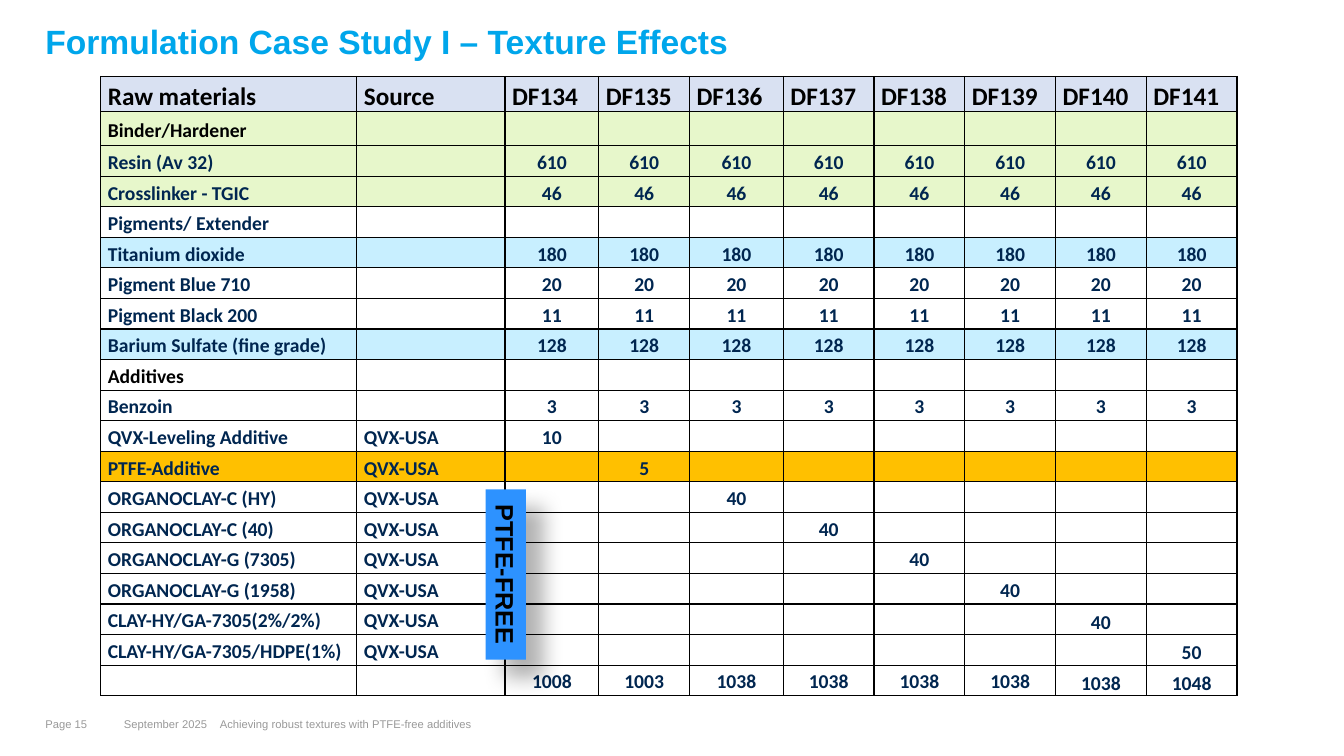
import lxml.etree
import pptx
import pptx.dml.color
import pptx.enum.shapes
import pptx.enum.text
import pptx.oxml.ns
import pptx.util

Inches, Pt = pptx.util.Inches, pptx.util.Pt
qn = pptx.oxml.ns.qn
ALIGN = pptx.enum.text.PP_ALIGN
ANCHOR = pptx.enum.text.MSO_ANCHOR
FIT = pptx.enum.text.MSO_AUTO_SIZE

THEME = {
    "heading_font": "Arial", "table_font": "Calibri",
    "title": "00A6EB", "footer": "999999", "ink": "000000", "navy": "002650",
    "header": "D9E1F2", "binder": "E7F7CB", "filler": "C8EFFF", "ptfe": "FFC000",
    "badge": "2D92FF",
    "title_size": 24, "header_size": 18, "body_size": 14, "footer_size": 8,
}


def write(paragraph, text, font, size, color, bold=False, **layout):
    for name, value in layout.items():
        setattr(paragraph, name, value)
    run = paragraph.add_run()
    run.text = text
    for name, value in {"name": THEME[font], "size": Pt(THEME[size]), "bold": bold}.items():
        setattr(run.font, name, value)
    run.font.color.rgb = pptx.dml.color.RGBColor.from_string(THEME[color])


def set_format(target, **values):
    for name, value in values.items():
        setattr(target, name, value)


deck = pptx.Presentation()
set_format(deck, slide_width=Inches(13.33), slide_height=Inches(7.5))
slide = deck.slides.add_slide(deck.slide_layouts[6])

captions = [
    ("Formulation Case Study I – Texture Effects", (0.45, 0.21, 12.44, 1.1), 0.04,
     {"size": "title_size", "color": "title", "bold": True, "line_spacing": 0.9}),
    ("September 2025", (1.23, 7.12, 0.87, 0.16), 0, {"size": "footer_size", "color": "footer"}),
    ("Achieving robust textures with PTFE-free additives", (2.18, 7.12, 8.98, 0.16), 0,
     {"size": "footer_size", "color": "footer"}),
    ("Page 15", (0.45, 7.12, 0.68, 0.16), 0, {"size": "footer_size", "color": "footer"}),
]
for text, box, top_margin, style in captions:
    frame = slide.shapes.add_textbox(*map(Inches, box)).text_frame
    set_format(frame, word_wrap=True, margin_left=0, margin_right=0,
               margin_top=Inches(top_margin), margin_bottom=0)
    write(frame.paragraphs[0], text, "heading_font", **style)

formulations = [f"DF{number}" for number in range(134, 142)]
count = len(formulations)
supplier = "QVX-USA"
everywhere = [
    ("Binder/Hardener", None, "binder", "ink"),
    ("Resin (Av 32)", 610, "binder", "navy"),
    ("Crosslinker - TGIC", 46, "binder", "navy"),
    ("Pigments/ Extender", None, None, "navy"),
    ("Titanium dioxide", 180, "filler", "navy"),
    ("Pigment Blue 710", 20, None, "navy"),
    ("Pigment Black 200", 11, None, "navy"),
    ("Barium Sulfate (fine grade)", 128, "filler", "navy"),
    ("Additives", None, None, "ink"),
    ("Benzoin", 3, None, "navy"),
]
additives = [
    ("QVX-Leveling Additive", 10),
    ("PTFE-Additive", 5),
    ("ORGANOCLAY-C (HY)", 40),
    ("ORGANOCLAY-C (40)", 40),
    ("ORGANOCLAY-G (7305)", 40),
    ("ORGANOCLAY-G (1958)", 40),
    ("CLAY-HY/GA-7305(2%/2%)", 40),
    ("CLAY-HY/GA-7305/HDPE(1%)", 50),
]
base = sum(amount or 0 for _, amount, _, _ in everywhere)

rows = [(["Raw materials", "Source", *formulations], "header", "ink")]
for material, amount, band, ink in everywhere:
    rows.append(([material, "", *[amount or ""] * count], band, ink))
for column, (material, amount) in enumerate(additives):
    doses = [amount if position == column else "" for position in range(count)]
    band = "ptfe" if material.startswith("PTFE") else None
    rows.append(([material, supplier, *doses], band, "navy"))
rows.append((["", "", *[base + amount for _, amount in additives]], None, "navy"))

widths = [2.54, 1.47, 0.93, 0.9, 0.93, *[0.9] * 5]
tall_row, table_height = 0.34, 6.14
short_row = (table_height - 2 * tall_row) / (len(rows) - 2)
recipe = slide.shapes.add_table(len(rows), len(widths), Inches(1), Inches(0.76),
                                Inches(sum(widths)), Inches(table_height)).table
set_format(recipe, first_row=False, horz_banding=False)
for column, width in zip(recipe.columns, widths):
    column.width = Inches(width)

for r, (values, band, ink) in enumerate(rows):
    recipe.rows[r].height = Inches(tall_row if r < 2 else short_row)
    for c, value in enumerate(values):
        cell = recipe.cell(r, c)
        low = r >= len(rows) - 3 and c >= len(widths) - 2
        set_format(cell, margin_left=Inches(0.07), margin_right=Inches(0.07),
                   margin_top=0, margin_bottom=0,
                   vertical_anchor=ANCHOR.BOTTOM if low else ANCHOR.MIDDLE)
        properties = cell._tc.get_or_add_tcPr()
        for side in ("a:lnL", "a:lnR", "a:lnT", "a:lnB"):
            border = lxml.etree.SubElement(properties, qn(side), w=str(Pt(1)))
            paint = lxml.etree.SubElement(border, qn("a:solidFill"))
            lxml.etree.SubElement(paint, qn("a:srgbClr"), val=THEME["ink"])
        if band:
            cell.fill.solid()
            cell.fill.fore_color.rgb = pptx.dml.color.RGBColor.from_string(THEME[band])
        else:
            cell.fill.background()
        paragraph = cell.text_frame.paragraphs[0]
        if value == "":
            lxml.etree.SubElement(paragraph._p, qn("a:endParaRPr"),
                                  sz=str(THEME["body_size"] * 100))
        else:
            write(paragraph, str(value), "table_font",
                  "header_size" if r == 0 else "body_size", ink, True,
                  alignment=ALIGN.LEFT if r == 0 or c < 2 else ALIGN.CENTER,
                  line_spacing=1.15, space_after=Pt(10))

badge = slide.shapes.add_shape(pptx.enum.shapes.MSO_SHAPE.RECTANGLE,
                               Inches(4.17), Inches(5.5), Inches(1.69), Inches(0.4))
set_format(badge, rotation=90)
badge.shadow.inherit = False
badge.fill.solid()
badge.fill.fore_color.rgb = pptx.dml.color.RGBColor.from_string(THEME["badge"])
badge.line.fill.background()
set_format(badge.text_frame, word_wrap=True, auto_size=FIT.SHAPE_TO_FIT_TEXT)
write(badge.text_frame.paragraphs[0], "PTFE-FREE", "heading_font", "header_size", "ink", True,
      alignment=ALIGN.CENTER)
effects = badge._element.spPr.find(qn("a:effectLst"))
shadow = lxml.etree.SubElement(effects, qn("a:outerShdw"), blurRad=str(Pt(15)),
                               dist=str(Pt(18)), dir="2700000", algn="ctr", rotWithShape="0")
shade = lxml.etree.SubElement(shadow, qn("a:srgbClr"), val=THEME["ink"])
lxml.etree.SubElement(shade, qn("a:alpha"), val="30000")

deck.save("out.pptx")
